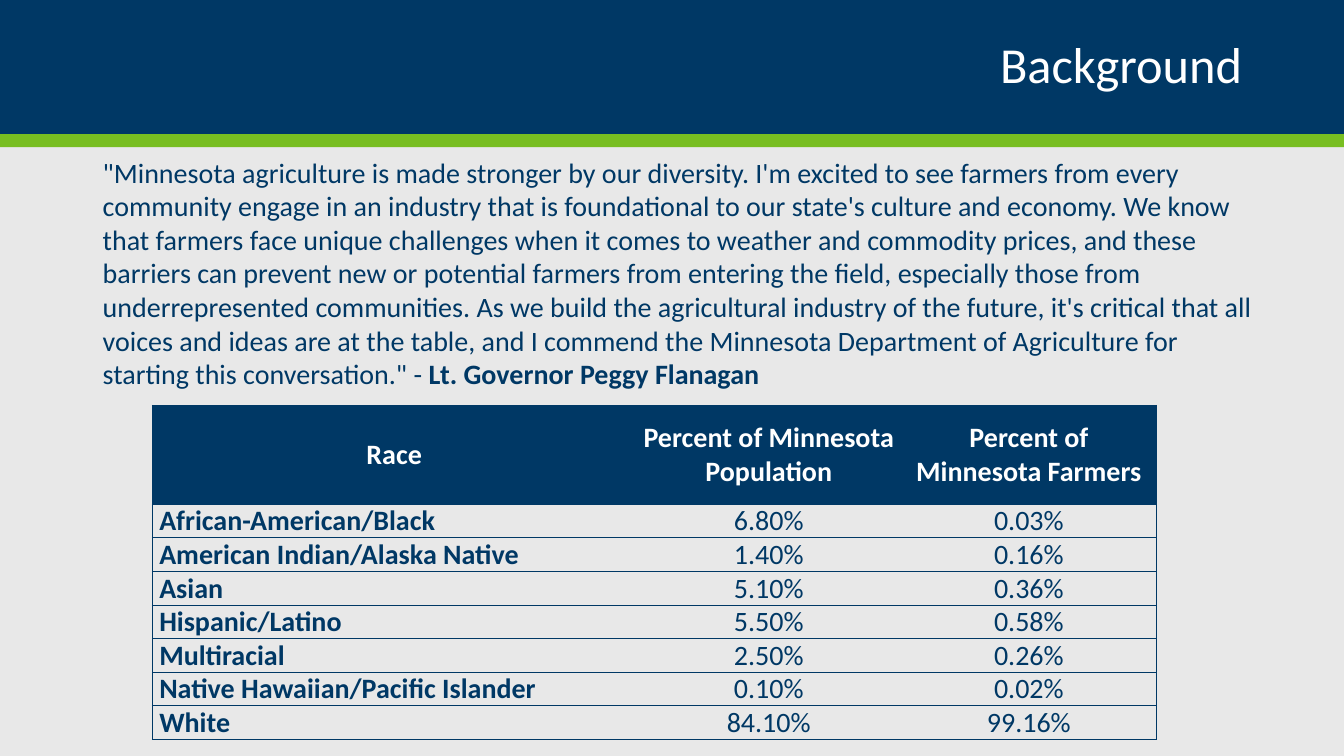
from lxml import etree
from pptx import Presentation, util as u
from pptx.dml import color
from pptx.enum import shapes, text
from pptx.oxml import ns

NAVY, GREEN, WHITE, GRAY = "003865", "78BE21", "FFFFFF", "E8E8E8"
FONT = "Calibri"
QUOTE = (
    "\"Minnesota agriculture is made stronger by our diversity. I'm excited to see "
    "farmers from every community engage in an industry that is foundational to our "
    "state's culture and economy. We know that farmers face unique challenges when it "
    "comes to weather and commodity prices, and these barriers can prevent new or "
    "potential farmers from entering the field, especially those from underrepresented "
    "communities. As we build the agricultural industry of the future, it's critical "
    "that all voices and ideas are at the table, and I commend the Minnesota Department "
    "of Agriculture for starting this conversation.\" - "
)
SPEAKER = "Lt. Governor Peggy Flanagan"
RACES = [
    ("Race", "Percent of Minnesota Population", "Percent of Minnesota Farmers"),
    ("African-American/Black", "6.80%", "0.03%"),
    ("American Indian/Alaska Native", "1.40%", "0.16%"),
    ("Asian", "5.10%", "0.36%"),
    ("Hispanic/Latino", "5.50%", "0.58%"),
    ("Multiracial", "2.50%", "0.26%"),
    ("Native Hawaiian/Pacific Islander", "0.10%", "0.02%"),
    ("White", "84.10%", "99.16%"),
]


def paint(target, shade):
    target.solid()
    target.fore_color.rgb = color.RGBColor.from_string(shade)


def style(span, size, shade, bold=False):
    span.font.name = FONT
    span.font.size = u.Pt(size)
    span.font.bold = bold
    paint(span.font.fill, shade)


def add_band(page, left, top, width, height, shade):
    band = page.shapes.add_shape(
        shapes.MSO_SHAPE.RECTANGLE, *map(u.Inches, (left, top, width, height)))
    band.shadow.inherit = False
    paint(band.fill, shade)
    band.line.fill.background()


def add_header(page, left, top, width, height):
    add_band(page, left, top, width, height, NAVY)
    add_band(page, left, top + height, width, 0.13, GREEN)
    box = page.shapes.add_textbox(
        *map(u.Inches, (left + 0.92, top + 0.17, width - 1.83, 1)))
    frame = box.text_frame
    frame.word_wrap = True
    frame.vertical_anchor = text.MSO_ANCHOR.MIDDLE
    para = frame.paragraphs[0]
    para.text = "Background"
    para.alignment = text.PP_ALIGN.RIGHT
    para.line_spacing = 0.9
    style(para.runs[0], 36, WHITE)


def add_quote(page, left, top, width, height):
    box = page.shapes.add_textbox(*map(u.Inches, (left, top, width, height)))
    box.text_frame.word_wrap = True
    para = box.text_frame.paragraphs[0]
    para.text = QUOTE
    para.add_run().text = SPEAKER
    for span, bold in zip(para.runs, (False, True)):
        style(span, 20, NAVY, bold)


def set_borders(cell, visible):
    properties = cell._tc.get_or_add_tcPr()
    for place, side in enumerate("LRTB"):
        line = etree.Element(ns.qn(f"a:ln{side}"), w=str(u.Pt(0.75)))
        if side in visible:
            fill = etree.SubElement(line, ns.qn("a:solidFill"))
            etree.SubElement(fill, ns.qn("a:srgbClr"), val=NAVY)
        else:
            etree.SubElement(line, ns.qn("a:noFill"))
        properties.insert(place, line)


def fill_cell(cell, words, row, column):
    cell.text = words
    cell.margin_left = cell.margin_right = u.Inches(0.07)
    cell.margin_top = cell.margin_bottom = 0
    para = cell.text_frame.paragraphs[0]
    if row == 0:
        paint(cell.fill, NAVY)
        cell.vertical_anchor = text.MSO_ANCHOR.MIDDLE
    else:
        cell.fill.background()
    if row == 0 or column > 0:
        para.alignment = text.PP_ALIGN.CENTER
    style(para.runs[0], 20, NAVY if row else WHITE, row == 0 or column == 0)
    set_borders(cell, "TB" + ("L", "", "R")[column])


def add_race_table(page, left, top, width, height):
    frame = page.shapes.add_table(
        len(RACES), 3, *map(u.Inches, (left, top, width, height)))
    table = frame.table
    table.first_row = table.horz_banding = False
    for column, share in zip(table.columns, (4.8, 2.63, width - 7.43)):
        column.width = u.Inches(share)
    header = 0.98
    for index, row in enumerate(table.rows):
        row.height = u.Inches((height - header) / (len(RACES) - 1) if index else header)
    for row, values in enumerate(RACES):
        for column, words in enumerate(values):
            fill_cell(table.cell(row, column), words, row, column)


def main():
    deck = Presentation()
    deck.slide_width, deck.slide_height = u.Inches(13.33), u.Inches(7.5)
    page = deck.slides.add_slide(deck.slide_layouts[6])
    paint(page.background.fill, GRAY)
    add_header(page, 0, 0, 13.33, 1.33)
    add_quote(page, 0.92, 1.49, 11.76, 2.46)
    add_race_table(page, 1.51, 4.02, 9.96, 3.31)
    deck.save("out.pptx")


if __name__ == "__main__":
    main()
